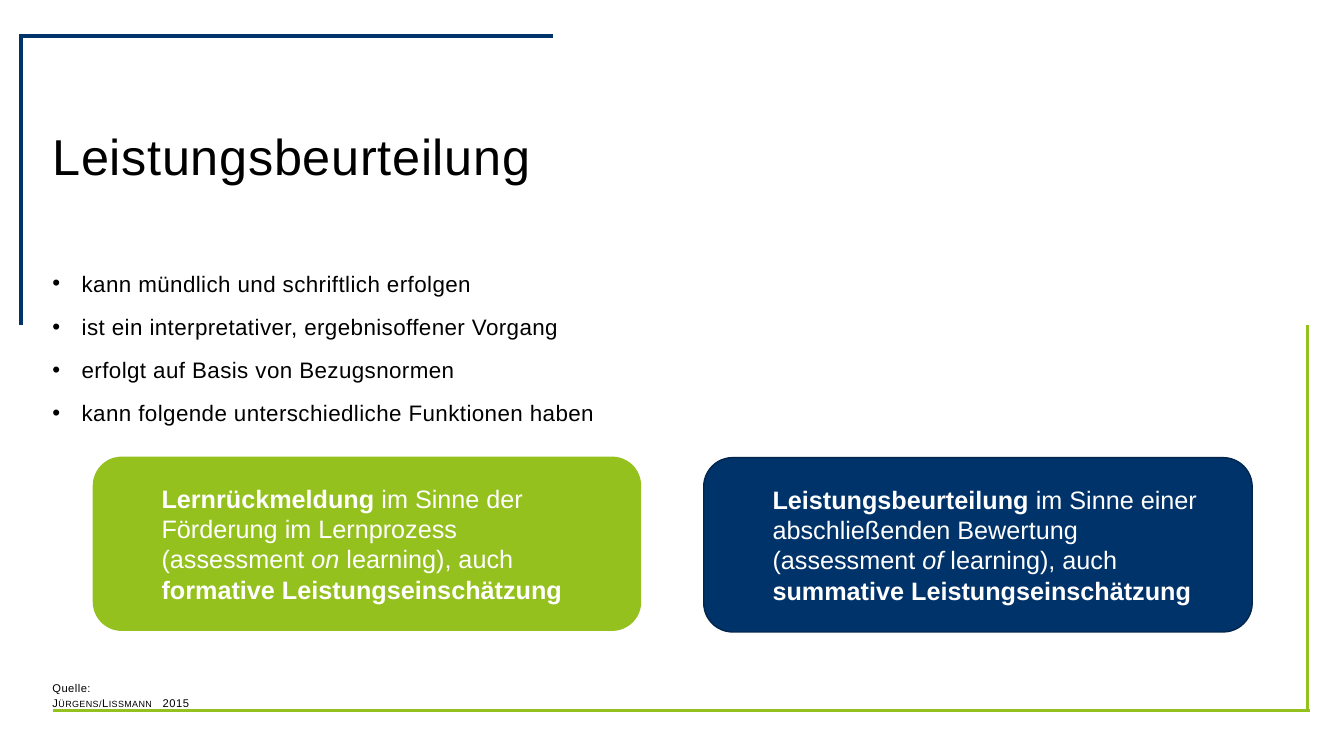
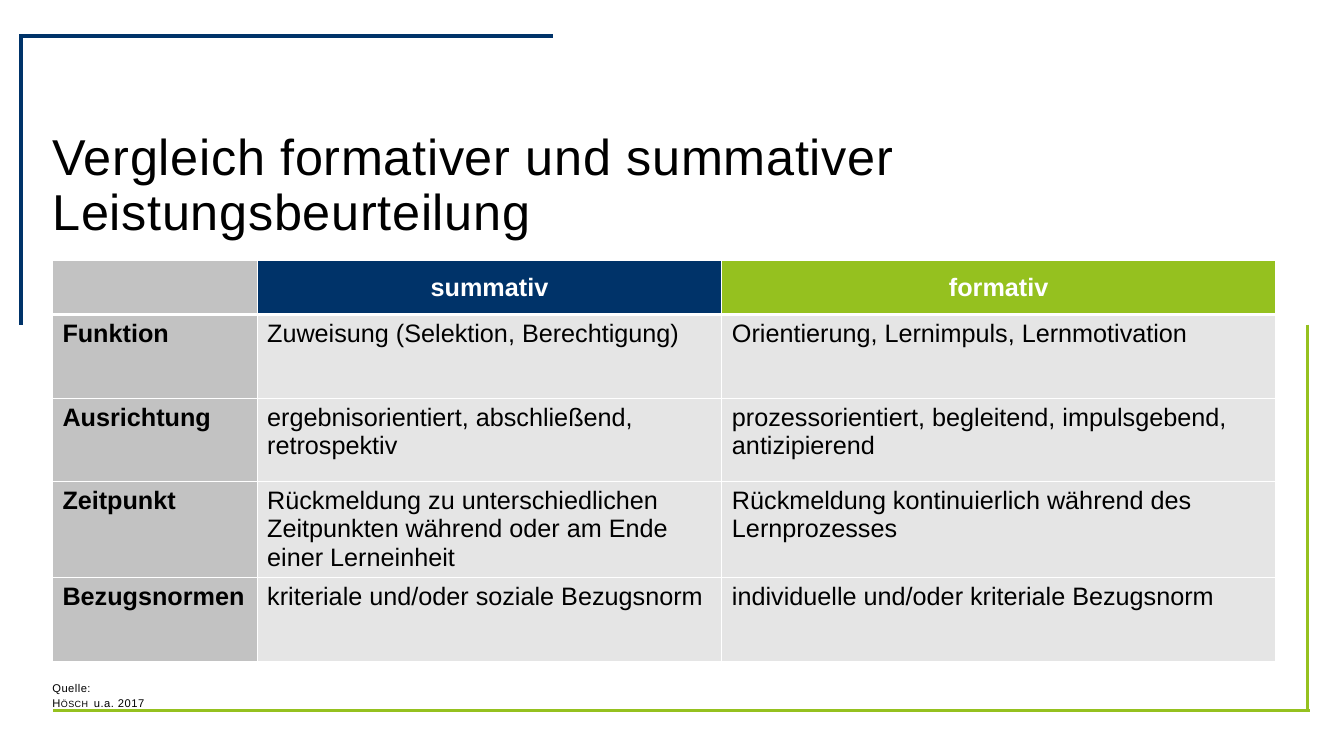
"""Build two slides on performance assessment: its functions and a comparison table."""
from lxml.etree import SubElement
from pptx import Presentation
from pptx.dml.color import RGBColor
from pptx.enum.shapes import MSO_SHAPE
from pptx.enum.text import MSO_ANCHOR, PP_ALIGN
from pptx.oxml.ns import qn
from pptx.util import Inches, Pt

COLORS = {"navy": "003369", "navy edge": "00264E", "green": "95C11F", "black": "000000",
          "white": "FFFFFF", "label": "C2C2C2", "cell": "E5E5E5"}
WIDTH, HEIGHT = 13.33, 7.5
MARGIN, CONTENT_WIDTH = 0.52, 12.13
BODY_TOP = 2.64
BREAK = ("\n", "")

FRAME = {
    "at": (0.21, 0.36),
    "columns": [0.32, 4.96, 7.48],
    "rows": [2.86, 3.83],
    "brackets": [("navy", "LT", (0, 0), (0, 1)), ("green", "RB", (1, 1), (1, 2))],
}
FUNCTIONS = {
    "title": "Leistungsbeurteilung",
    "source": [("Jürgens/Lissmann ", "small"), ("2015", "")],
    "points": ["kann mündlich und schriftlich erfolgen",
               "ist ein interpretativer, ergebnisoffener Vorgang",
               "erfolgt auf Basis von Bezugsnormen",
               "kann folgende unterschiedliche Funktionen haben"],
    "cards": [
        (0.92, 4.53, "green", None, [
            [("Lernrückmeldung", "bold"), (" im Sinne der Förderung im Lernprozess ", ""), BREAK,
             ("(assessment ", ""), ("on ", "italic"), ("learning), auch", "")],
            [("formative Leistungseinschätzung", "bold")]]),
        (6.98, 4.54, "navy", "navy edge", [
            [("Leistungsbeurteilung", "bold"), (" im Sinne einer abschließenden Bewertung ", ""),
             BREAK, ("(assessment ", ""), ("of ", "italic"), ("learning), auch ", ""),
             ("summative Leistungseinschätzung", "bold")]]),
    ],
}
COMPARISON = {
    "title": "Vergleich formativer und summativer Leistungsbeurteilung",
    "source": [("Hösch ", "small"), ("u.a. 2017", "")],
    "at": (MARGIN, 2.58),
    "columns": [2.03, 4.61, 5.49],
    "rows": [0.54, 0.83, 0.83, 0.91, 0.83],
    "cells": [
        ["", "summativ", "formativ"],
        ["Funktion", "Zuweisung (Selektion, Berechtigung)",
         "Orientierung, Lernimpuls, Lernmotivation"],
        ["Ausrichtung", "ergebnisorientiert, abschließend, retrospektiv",
         "prozessorientiert, begleitend, impulsgebend, antizipierend"],
        ["Zeitpunkt",
         "Rückmeldung zu unterschiedlichen Zeitpunkten während oder am Ende einer Lerneinheit",
         "Rückmeldung kontinuierlich während des Lernprozesses"],
        ["Bezugsnormen", "kriteriale und/oder soziale Bezugsnorm",
         "individuelle und/oder kriteriale Bezugsnorm"],
    ],
}


def rgb(name):
    return RGBColor.from_string(COLORS[name])


def add_runs(paragraph, pieces, size, color="black", spacing=0):
    for text, style in pieces:
        if text == "\n":
            paragraph.add_line_break()
            continue
        run = paragraph.add_run()
        run.text = text
        font = run.font
        font.name, font.size, font.color.rgb = "Arial", Pt(size), rgb(color)
        font.bold, font.italic = style == "bold", style == "italic"
        properties = run._r.get_or_add_rPr()
        if spacing:
            properties.set("spc", str(round(spacing * 100)))
        if style == "small":
            properties.set("cap", "small")


def add_paragraphs(frame, paragraphs, size, color="black", spacing=0):
    for index, pieces in enumerate(paragraphs):
        paragraph = frame.add_paragraph() if index else frame.paragraphs[0]
        add_runs(paragraph, pieces, size, color, spacing)
    return frame.paragraphs


def add_text(slide, top, height, paragraphs, size, spacing, leading):
    box = slide.shapes.add_textbox(Inches(MARGIN), Inches(top),
                                   Inches(CONTENT_WIDTH), Inches(height))
    frame = box.text_frame
    frame.word_wrap = True
    frame.margin_left = frame.margin_right = frame.margin_top = frame.margin_bottom = 0
    lines = add_paragraphs(frame, paragraphs, size, spacing=spacing)
    for line in lines:
        line.line_spacing = leading
    return lines


def add_grid(slide, layout):
    columns, rows = layout["columns"], layout["rows"]
    left, top = layout["at"]
    table = slide.shapes.add_table(len(rows), len(columns), Inches(left), Inches(top),
                                   Inches(sum(columns)), Inches(sum(rows))).table
    table.horz_banding = False
    for column, width in zip(table.columns, columns):
        column.width = Inches(width)
    for row, height in zip(table.rows, rows):
        row.height = Inches(height)
    return table


def add_borders(cell, widths, color):
    properties = cell._tc.get_or_add_tcPr()
    for side in "LRTB":
        width = widths.get(side, 0)
        border = SubElement(properties, qn(f"a:ln{side}"), w=str(Pt(width)))
        if width:
            SubElement(SubElement(border, qn("a:solidFill")), qn("a:srgbClr"), val=COLORS[color])
        else:
            SubElement(border, qn("a:noFill"))


def add_frame(slide):
    table = add_grid(slide, FRAME)
    table.first_row = False
    sides = {}
    for color, edges, first, last in FRAME["brackets"]:
        table.cell(*first).merge(table.cell(*last))
        sides[first] = sides[last] = (dict.fromkeys(edges, 3), color)
    for r in range(len(FRAME["rows"])):
        for c in range(len(FRAME["columns"])):
            add_borders(table.cell(r, c), *sides.get((r, c), ({}, "white")))
            table.cell(r, c).fill.background()


def add_base_slide(deck, content):
    slide = deck.slides.add_slide(deck.slide_layouts[6])
    add_frame(slide)
    add_text(slide, 1.31, 0.65, [[(content["title"], "")]], 36, 0.5, 0.9)
    add_text(slide, 6.74, 0.31, [[("Quelle:", "")], content["source"]], 8, 0.3, 1.14)
    return slide


def add_points(slide, points):
    for line in add_text(slide, BODY_TOP, 4.02, [[(point, "")] for point in points],
                         16, 0.3, 1.14):
        line.space_before, line.space_after = Pt(6), Pt(3)
        properties = line._p.get_or_add_pPr()
        properties.set("marL", str(Inches(0.29)))
        properties.set("indent", str(-Inches(0.29)))
        SubElement(properties, qn("a:buFont"), typeface="Arial")
        SubElement(properties, qn("a:buChar"), char="•")


def add_cards(slide, cards):
    for left, top, fill, edge, paragraphs in cards:
        card = slide.shapes.add_shape(MSO_SHAPE.ROUNDED_RECTANGLE, Inches(left), Inches(top),
                                      Inches(5.44), Inches(1.73))
        card.shadow.inherit = False
        card.fill.solid()
        card.fill.fore_color.rgb = rgb(fill)
        if edge:
            card.line.color.rgb, card.line.width = rgb(edge), Pt(1)
        else:
            card.line.fill.background()
        frame = card.text_frame
        frame.word_wrap, frame.vertical_anchor = True, MSO_ANCHOR.MIDDLE
        for line in add_paragraphs(frame, paragraphs, 18, "white"):
            line.alignment = PP_ALIGN.LEFT
            line._p.get_or_add_pPr().set("marL", str(Inches(0.5)))


def add_comparison(slide, content):
    table = add_grid(slide, content)
    header_fills = ["label", "navy", "green"]
    for r, texts in enumerate(content["cells"]):
        for c, text in enumerate(texts):
            cell = table.cell(r, c)
            line = cell.text_frame.paragraphs[0]
            if r == 0:
                add_borders(cell, {"L": 1, "R": 1, "T": 1, "B": 3}, "white")
                cell.vertical_anchor, line.alignment = MSO_ANCHOR.MIDDLE, PP_ALIGN.CENTER
            else:
                cell.margin_bottom = 0
            cell.fill.solid()
            cell.fill.fore_color.rgb = rgb("cell" if r and c else header_fills[c])
            if text:
                add_runs(line, [(text, "" if r and c else "bold")], 18, "black" if r else "white")


def main():
    deck = Presentation()
    deck.slide_width, deck.slide_height = Inches(WIDTH), Inches(HEIGHT)
    functions = add_base_slide(deck, FUNCTIONS)
    add_points(functions, FUNCTIONS["points"])
    add_cards(functions, FUNCTIONS["cards"])
    add_comparison(add_base_slide(deck, COMPARISON), COMPARISON)
    deck.save("out.pptx")


if __name__ == "__main__":
    main()
